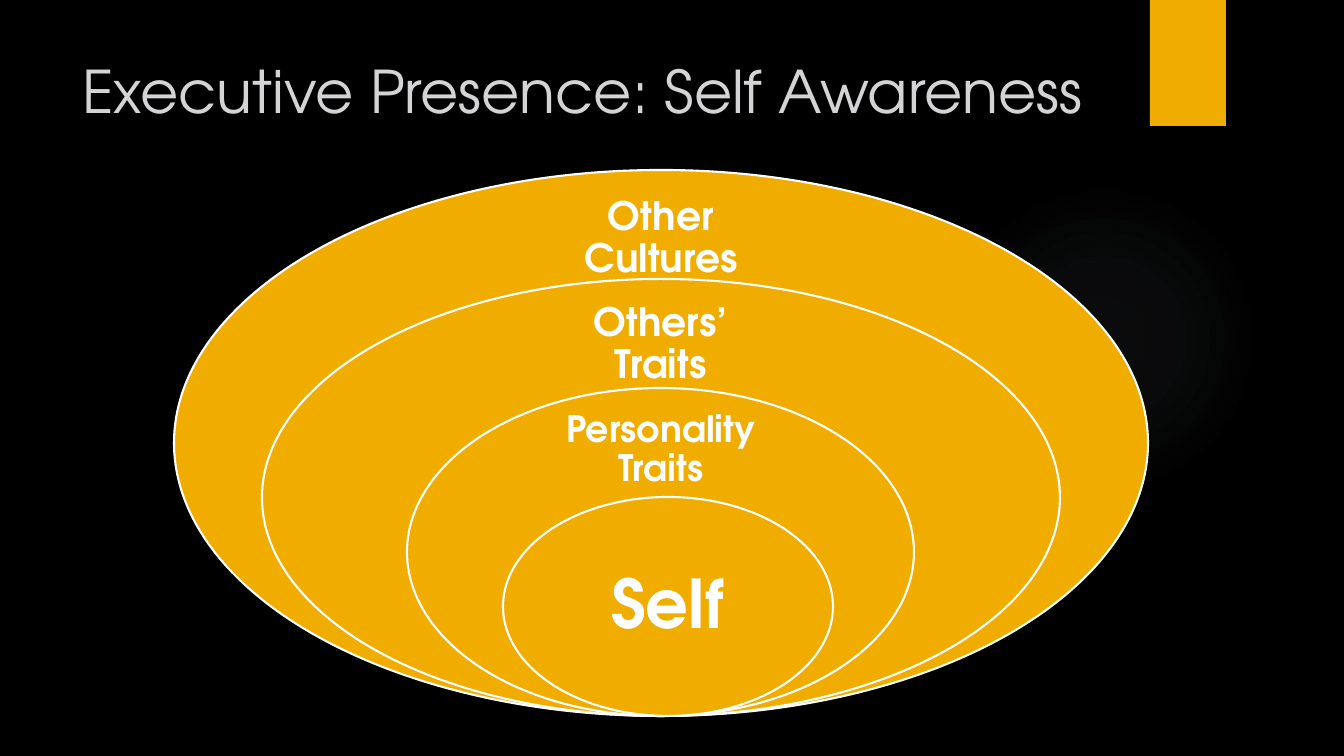
"""Builds the Executive Presence slide with its nested circles of awareness."""
import dataclasses

import lxml.etree
import pptx
import pptx.dml.color
import pptx.enum.shapes
import pptx.enum.text
import pptx.oxml.ns
import pptx.util

TITLE = "Executive Presence: Self Awareness"
TITLE_BOX = (72, 50, 1037, 154)
ACCENT_BAR = (1150, 0, 76, 126)
GLOW = (949, 184, 310, 310)
GLOW_STOPS = [(0, 7), (36, 6), (69, 0)]
RINGS = [
    {"label": "Other Cultures", "left": 174, "width": 974,
     "label_box": (525, 198, 272, 82), "inset": 22, "size": "ring"},
    {"label": "Others’ Traits", "left": 262, "width": 798,
     "label_box": (521, 305, 279, 79), "inset": 22, "size": "ring"},
    {"label": "Personality Traits", "left": 407, "width": 507,
     "label_box": (543, 413, 236, 74), "inset": 20, "size": "inner_ring"},
    {"label": "Self", "left": 503, "width": 330,
     "label_box": (551, 552, 233, 109), "inset": 37, "size": "core"},
]
RINGS_TOP, RINGS_BOTTOM, RING_STEP = 170, 716, 109
SLIDE_SIZE = (1344, 756)
EMU_PER_PX = 914400 / 100.8


@dataclasses.dataclass(frozen=True)
class Theme:
    """Colours, font and type sizes."""
    background: str = "000000"
    accent: str = "F0AD00"
    glow: str = "98A0B2"
    heading: str = "D4D4D6"
    light: str = "FFFFFF"
    font: str = "TeX Gyre Adventor"
    sizes: tuple = (("title", 42), ("ring", 28), ("inner_ring", 26), ("core", 48))


THEME = Theme()
SIZES = dict(THEME.sizes)
SHAPE = pptx.enum.shapes.MSO_SHAPE
ALIGN = pptx.enum.text.PP_ALIGN
ANCHOR = pptx.enum.text.MSO_ANCHOR


def emu(*lengths):
    """Turn px lengths into EMU."""
    return [pptx.util.Emu(round(length * EMU_PER_PX)) for length in lengths]


def rgb(value):
    """Turn a hex string into a colour."""
    return pptx.dml.color.RGBColor.from_string(value)


def write(frame, text, *, size, color, bold=False, align=ALIGN.LEFT,
          anchor=ANCHOR.TOP, inset=None, spacing=1.0):
    """Put one formatted paragraph into a text frame."""
    frame.word_wrap = True
    frame.auto_size = pptx.enum.text.MSO_AUTO_SIZE.NONE
    frame.vertical_anchor = anchor
    if inset is not None:
        margin, = emu(inset)
        frame.margin_left = frame.margin_right = margin
        frame.margin_top = frame.margin_bottom = margin
    frame.text = text
    paragraph = frame.paragraphs[0]
    paragraph.alignment = align
    paragraph.line_spacing = spacing
    font = paragraph.runs[0].font
    font.name, font.size, font.bold = THEME.font, pptx.util.Pt(size), bold
    font.color.rgb = rgb(color)


def add_filled(shapes, preset, box, outline=None):
    """Add an accent-coloured shape, outlined if a colour is given."""
    filled = shapes.add_shape(preset, *emu(*box))
    filled.shadow.inherit = False
    filled.fill.solid()
    filled.fill.fore_color.rgb = rgb(THEME.accent)
    if outline:
        filled.line.color.rgb = rgb(outline)
        filled.line.width = pptx.util.Pt(1.5)
    else:
        filled.line.fill.background()
    return filled


def add_glow(shapes):
    """Add the faint circle that fades outwards."""
    glow = add_filled(shapes, SHAPE.OVAL, GLOW)
    stops = "".join(
        f'<a:gs pos="{place * 1000}"><a:srgbClr val="{THEME.glow}">'
        f'<a:alpha val="{alpha * 1000}"/></a:srgbClr></a:gs>'
        for place, alpha in GLOW_STOPS)
    gradient = lxml.etree.fromstring(
        f'<a:gradFill xmlns:a="{pptx.oxml.ns.nsuri("a")}" rotWithShape="1">'
        f'<a:gsLst>{stops}</a:gsLst><a:path path="circle">'
        '<a:fillToRect l="50000" t="50000" r="50000" b="50000"/></a:path></a:gradFill>')
    properties = glow.element.spPr
    properties.replace(properties.find(pptx.oxml.ns.qn("a:solidFill")), gradient)


def add_rings(shapes):
    """Add the nested ellipses, all resting on one bottom line."""
    for index, ring in enumerate(RINGS):
        top = RINGS_TOP + index * RING_STEP
        box = (ring["left"], top, ring["width"], RINGS_BOTTOM - top)
        add_filled(shapes, SHAPE.OVAL, box, THEME.light)
        label = shapes.add_textbox(*emu(*ring["label_box"]))
        write(label.text_frame, ring["label"], size=SIZES[ring["size"]],
              color=THEME.light, bold=True, align=ALIGN.CENTER,
              anchor=ANCHOR.MIDDLE, inset=ring["inset"], spacing=0.9)


def main():
    """Build and save the slide."""
    deck = pptx.Presentation()
    deck.slide_width, deck.slide_height = emu(*SLIDE_SIZE)
    slide = deck.slides.add_slide(deck.slide_layouts[5])
    slide.background.fill.solid()
    slide.background.fill.fore_color.rgb = rgb(THEME.background)
    title = slide.shapes.title
    title.left, title.top, title.width, title.height = emu(*TITLE_BOX)
    write(title.text_frame, TITLE, size=SIZES["title"], color=THEME.heading)
    add_glow(slide.shapes)
    add_filled(slide.shapes, SHAPE.RECTANGLE, ACCENT_BAR)
    add_rings(slide.shapes.add_group_shape().shapes)
    deck.save("out.pptx")


if __name__ == "__main__":
    main()
